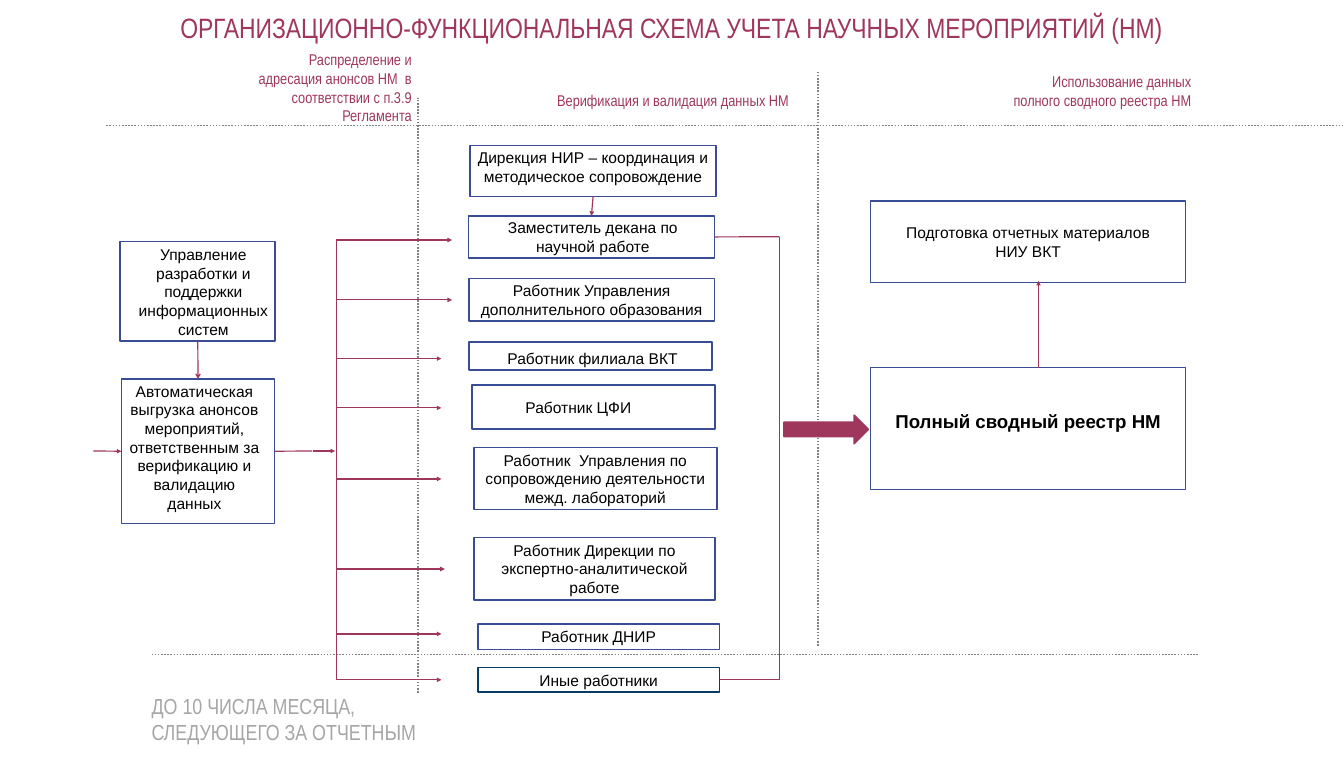
import pptx
import pptx.util
import pptx.dml.color
import pptx.enum.dml
import pptx.enum.shapes
import pptx.enum.text
import pptx.oxml.ns
import lxml.etree

Inches = pptx.util.Inches
RGBColor = pptx.dml.color.RGBColor
Align = pptx.enum.text.PP_ALIGN
Anchor = pptx.enum.text.MSO_ANCHOR
Shape = pptx.enum.shapes.MSO_SHAPE

BERRY = RGBColor(0x9F, 0x37, 0x5C)
BLUE = RGBColor(0x3A, 0x4C, 0x94)
NAVY = RGBColor(0x07, 0x3C, 0x65)
GREY = RGBColor(0x80, 0x80, 0x80)
PALE = RGBColor(0xA6, 0xA6, 0xA6)
BLACK = RGBColor(0, 0, 0)

SLIDE_WIDTH, SLIDE_HEIGHT = 24.02, 13.78
NARROW = "Arial Narrow"
INSETS = (0.1, 0.05, 0.1, 0.05)

TITLE = "ОРГАНИЗАЦИОННО-ФУНКЦИОНАЛЬНАЯ СХЕМА УЧЕТА НАУЧНЫХ МЕРОПРИЯТИЙ (НМ)"
DEADLINE = "ДО 10 ЧИСЛА МЕСЯЦА, СЛЕДУЮЩЕГО ЗА ОТЧЕТНЫМ"

HEADERS = [
    ("Распределение и адресация анонсов НМ  в соответствии с п.3.9 Регламента",
     (4.28, 0.88, 3.08, 1.37), (0.08, 0, 0, 0)),
    ("Верификация и валидация данных НМ", (9.82, 1.57, 4.38, 0.44), INSETS),
    ("Использование данных полного сводного реестра НМ", (17.91, 1.24, 3.48, 0.77), INSETS),
]

BOXES = {
    "systems": ("Управление разработки и поддержки информационных систем",
                (2.15, 4.32, 2.77, 1.78), {"insets": (0.2, 0.05, 0, 0.05)}),
    "export": ("Автоматическая выгрузка анонсов мероприятий, ответственным за "
               "верификацию и валидацию данных",
               (2.17, 6.77, 2.74, 2.59), {"insets": (0.07, 0.05, 0.2, 0.05), "anchor": Anchor.TOP}),
    "directorate": ("Дирекция НИР – координация и методическое сопровождение",
                    (8.4, 2.6, 4.4, 0.91), {"anchor": Anchor.TOP}),
    "deputy": ("Заместитель декана по научной работе",
               (8.37, 3.86, 4.4, 0.75), {"insets": (0.15, 0.05, 0.1, 0.05)}),
    "education": ("Работник Управления дополнительного образования", (8.38, 4.98, 4.39, 0.76), {}),
    "branch": ("Работник филиала ВКТ",
               (8.38, 6.11, 4.35, 0.5), {"insets": (0.17, 0.12, 0.1, 0.05)}),
    "finance": ("Работник ЦФИ", (8.44, 6.88, 4.34, 0.79),
                {"insets": (0.95, 0.05, 0.1, 0.05), "align": Align.LEFT}),
    "laboratories": ("Работник  Управления по сопровождению деятельности межд. лабораторий",
                     (8.47, 8, 4.34, 1.11), {}),
    "analytics": ("Работник Дирекции по экспертно-аналитической работе",
                  (8.47, 9.61, 4.31, 1.11), {}),
    "research": ("Работник ДНИР", (8.54, 11.15, 4.32, 0.46), {}),
    "others": ("Иные работники", (8.54, 11.93, 4.32, 0.44), {"outline": NAVY}),
    "reports": ("Подготовка отчетных материалов НИУ ВКТ",
                (15.56, 3.59, 5.63, 1.46), {"insets": (0.58, 0.05, 0.58, 0.05)}),
    "registry": ("Полный сводный реестр НМ", (15.56, 6.57, 5.63, 2.18),
                 {"insets": (0.1, 0.05, 0.1, 0.31), "size": 24, "bold": True}),
}

DIVIDERS = [
    ((2.71, 11.7), (21.41, 11.7)),
    ((7.47, 12.38), (7.47, 1.75)),
    ((1.9, 2.24), (SLIDE_WIDTH, 2.24)),
    ((14.62, 11.54), (14.62, 1.28)),
]

TRUNK_X, GATHER_X = 6.01, 13.93
BRANCHES = [(4.29, 8.08), (5.36, 8.08), (6.41, 7.89), (7.29, 7.89),
            (8.56, 7.89), (10.17, 7.95), (11.33, 7.89), (12.15, 7.89)]
TRUNK_TOP, TRUNK_BOTTOM = BRANCHES[0][0], BRANCHES[-1][0]

TOP, LEFT, BOTTOM, RIGHT = range(4)
FLOWS = [
    (("systems", BOTTOM), ("export", TOP), "arrow"),
    (("directorate", BOTTOM), ("deputy", TOP), "triangle"),
    ((1.67, 8.06), ("export", LEFT), "triangle"),
    (("export", RIGHT), (5.58, 8.06), None),
    ((5.6, 8.06), (5.99, 8.06), "triangle"),
    ((TRUNK_X, TRUNK_TOP), (TRUNK_X, TRUNK_BOTTOM), None),
    (("deputy", RIGHT), (GATHER_X, 4.23), None),
    ((GATHER_X, 4.23), (GATHER_X, 12.15), None),
    (("others", RIGHT), (GATHER_X, 12.15), None),
    ((18.56, 6.57), (18.56, 5.02), "triangle"),
]
FLOWS += [((TRUNK_X, y), (end, y), "triangle") for y, end in BRANCHES]


def write(shape, text, size, color, font="Arial", align=Align.CENTER,
          anchor=Anchor.MIDDLE, insets=INSETS, bold=False):
    frame = shape.text_frame
    frame.text = text
    frame.word_wrap = True
    frame.auto_size = pptx.enum.text.MSO_AUTO_SIZE.NONE
    frame.vertical_anchor = anchor
    frame.margin_left, frame.margin_top, frame.margin_right, frame.margin_bottom = map(Inches, insets)
    para = frame.paragraphs[0]
    para.alignment = align
    span = para.runs[0]
    span.font.name = font
    span.font.size = pptx.util.Pt(size)
    span.font.bold = bold
    span.font.color.rgb = color


def add_label(page, text, place, size, color, **style):
    label = page.shapes.add_textbox(*map(Inches, place))
    write(label, text, size, color, NARROW, **style)


def add_box(page, text, place, outline=BLUE, size=20, **style):
    box = page.shapes.add_shape(Shape.RECTANGLE, *map(Inches, place))
    box.shadow.inherit = False
    box.fill.background()
    box.line.color.rgb = outline
    box.line.width = pptx.util.Pt(2)
    write(box, text, size, BLACK, **style)
    return box


def add_line(page, boxes, start, end, color, width, head=None):
    joined = [point[0] in boxes for point in (start, end)]
    points = [(0, 0) if glued else point for glued, point in zip(joined, (start, end))]
    line = page.shapes.add_connector(pptx.enum.shapes.MSO_CONNECTOR.STRAIGHT,
                                     *map(Inches, points[0] + points[1]))
    if joined[0]:
        line.begin_connect(boxes[start[0]], start[1])
    if joined[1]:
        line.end_connect(boxes[end[0]], end[1])
    line.line.color.rgb = color
    line.line.width = pptx.util.Pt(width)
    if head:
        tail = lxml.etree.SubElement(line.line._get_or_add_ln(), pptx.oxml.ns.qn("a:tailEnd"))
        tail.set("type", head)
    lxml.etree.SubElement(line._element.spPr, pptx.oxml.ns.qn("a:effectLst"))
    return line


def main():
    deck = pptx.Presentation()
    deck.slide_width, deck.slide_height = Inches(SLIDE_WIDTH), Inches(SLIDE_HEIGHT)
    page = deck.slides.add_slide(deck.slide_layouts[5])

    title = page.shapes.title
    title.left, title.top, title.width, title.height = map(Inches, (2.36, 0.01, 19.29, 0.97))
    write(title, TITLE, 36, BERRY, NARROW, insets=(0.04, 0, 0.04, 0))

    for start, end in DIVIDERS:
        divider = add_line(page, {}, start, end, GREY, 2)
        divider.line.dash_style = pptx.enum.dml.MSO_LINE.ROUND_DOT
    for text, place, insets in HEADERS:
        add_label(page, text, place, 20, BERRY, align=Align.RIGHT, insets=insets)
    add_label(page, DEADLINE, (2.71, 12.5, 5.58, 0.69), 28, PALE,
              align=Align.LEFT, insets=(0, 0, 0, 0))

    boxes = {name: add_box(page, text, place, **style)
             for name, (text, place, style) in BOXES.items()}
    for start, end, head in FLOWS:
        add_line(page, boxes, start, end, BERRY, 1.5, head)

    arrow = page.shapes.add_shape(Shape.RIGHT_ARROW, *map(Inches, (14.01, 7.42, 1.51, 0.51)))
    arrow.shadow.inherit = False
    arrow.fill.solid()
    arrow.fill.fore_color.rgb = BERRY
    arrow.line.color.rgb = BERRY
    arrow.line.width = pptx.util.Pt(2)

    deck.save("out.pptx")


if __name__ == "__main__":
    main()
